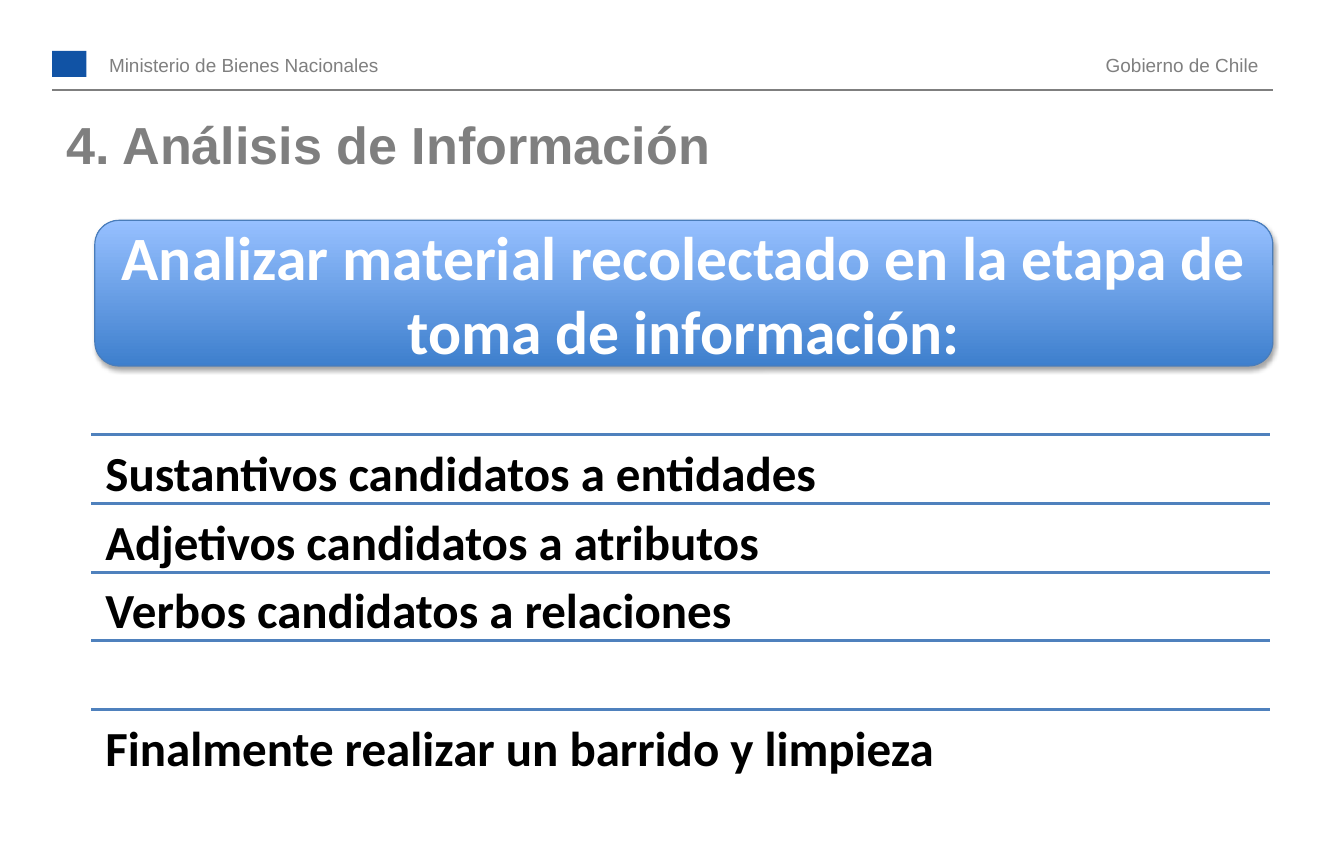
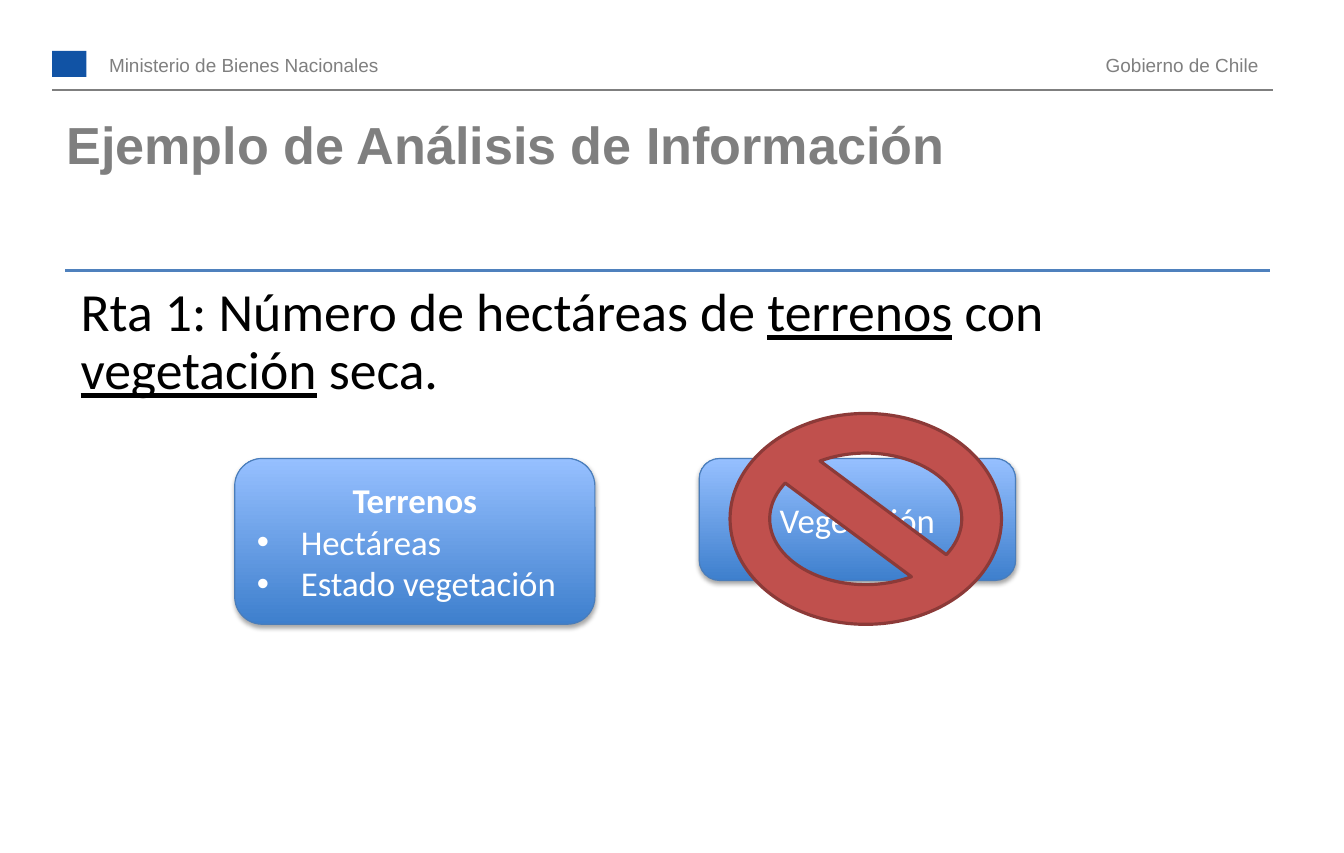
"""Builds two slides on the analysis of information."""
from lxml import etree
from pptx import Presentation
from pptx.dml.color import RGBColor
from pptx.enum.shapes import MSO_CONNECTOR, MSO_SHAPE
from pptx.enum.text import MSO_ANCHOR, MSO_AUTO_SIZE, PP_ALIGN
from pptx.oxml import parse_xml
from pptx.oxml.ns import nsdecls, qn
from pptx.util import Emu, Pt

STRAIGHT = MSO_CONNECTOR.STRAIGHT
RECT, ROUND_RECT = MSO_SHAPE.RECTANGLE, MSO_SHAPE.ROUNDED_RECTANGLE
NO_SYMBOL = MSO_SHAPE.NO_SYMBOL
TOP, MIDDLE = MSO_ANCHOR.TOP, MSO_ANCHOR.MIDDLE
LEFT, CENTER, RIGHT = PP_ALIGN.LEFT, PP_ALIGN.CENTER, PP_ALIGN.RIGHT
NO_AUTOFIT = MSO_AUTO_SIZE.NONE

PX = 9525
WIDTH, HEIGHT = 1134, 720
MARGIN, RIGHT_EDGE = 44, 1074
LABEL_WIDTH = 484

BLACK = RGBColor(0x00, 0x00, 0x00)
WHITE = RGBColor(0xFF, 0xFF, 0xFF)
GRAY = RGBColor(0x7F, 0x7F, 0x7F)
EMBLEM_BLUE = RGBColor(0x11, 0x53, 0xA5)
RULE_BLUE = RGBColor(0x4F, 0x81, 0xBD)
BOX_DARK = RGBColor(0x3E, 0x7F, 0xCD)
BOX_LIGHT = RGBColor(0x96, 0xC0, 0xFF)
BOX_LINE = RGBColor(0x4A, 0x7D, 0xBA)
SIGN_RED = RGBColor(0xC0, 0x50, 0x4D)
SIGN_LINE = RGBColor(0x8C, 0x3A, 0x38)

SHADOW = (
    f'<a:outerShdw {nsdecls("a")} blurRad="39370" dist="22860" dir="5400000" '
    'rotWithShape="0"><a:srgbClr val="000000"><a:alpha val="35000"/>'
    '</a:srgbClr></a:outerShdw>'
)


def px(*lengths):
    return [Emu(n * PX) for n in lengths]


class Deck:
    """Holds the presentation, its style and the current slide."""

    def __init__(self):
        self.prs = Presentation()
        self.prs.slide_width, self.prs.slide_height = px(WIDTH, HEIGHT)
        self.s = None

    def slide(self, title):
        self.s = self.prs.slides.add_slide(self.prs.slide_layouts[1])
        self.shape(RECT, MARGIN, 43, 29, 22, EMBLEM_BLUE)
        self.label("Ministerio de Bienes Nacionales", 80, LEFT)
        self.label("Gobierno de Chile", RIGHT_EDGE - LABEL_WIDTH, RIGHT)
        self.rule(MARGIN, RIGHT_EDGE, 76, GRAY, 0.75)
        sp = self.s.shapes.title
        self.place(sp, MARGIN, 77, 1005, 89)
        tf = self.frame(sp, MIDDLE)
        tf.text = title
        self.font(tf.paragraphs[0], 33, GRAY, "Arial", True)

    def place(self, sp, x, y, w, h):
        sp.left, sp.top, sp.width, sp.height = px(x, y, w, h)

    def frame(self, sp, anchor, inset_x=12, inset_y=6):
        tf = sp.text_frame
        tf.word_wrap = True
        tf.auto_size = NO_AUTOFIT
        tf.vertical_anchor = anchor
        tf.margin_left, tf.margin_right = px(inset_x, inset_x)
        tf.margin_top, tf.margin_bottom = px(inset_y, inset_y)
        return tf

    def font(self, p, size, color, name="Calibri", bold=False, align=LEFT):
        p.alignment = align
        for r in p.runs:
            r.font.size = Pt(size)
            r.font.name = name
            r.font.bold = bold
            r.font.color.rgb = color

    def label(self, text, x, align):
        sp = self.s.shapes.add_textbox(*px(x, 38, LABEL_WIDTH, 33))
        tf = self.frame(sp, MIDDLE)
        tf.text = text
        self.font(tf.paragraphs[0], 12, GRAY, "Arial", align=align)

    def rule(self, x1, x2, y, color=RULE_BLUE, weight=2):
        line = self.s.shapes.add_connector(STRAIGHT, *px(x1, y, x2, y))
        line.line.color.rgb = color
        line.line.width = Pt(weight)
        etree.SubElement(line._element.spPr, qn("a:effectLst"))

    def shape(self, kind, x, y, w, h, fill=None, outline=None, weight=0.75):
        sp = self.s.shapes.add_shape(kind, *px(x, y, w, h))
        sp.shadow.inherit = False
        if fill is not None:
            sp.fill.solid()
            sp.fill.fore_color.rgb = fill
        if outline is None:
            sp.line.fill.background()
        else:
            sp.line.color.rgb = outline
            sp.line.width = Pt(weight)
        return sp

    def box(self, text, x, y, w, h, size, bold=False, bullets=()):
        sp = self.shape(ROUND_RECT, x, y, w, h, outline=BOX_LINE)
        sp.fill.gradient()
        sp.fill.gradient_angle = 90
        for stop, color in zip(sp.fill.gradient_stops, (BOX_DARK, BOX_LIGHT)):
            stop.color.rgb = color
        sp._element.spPr.find(qn("a:effectLst")).append(parse_xml(SHADOW))
        tf = self.frame(sp, MIDDLE)
        tf.text = text
        self.font(tf.paragraphs[0], size, WHITE, bold=bold, align=CENTER)
        for item in bullets:
            p = tf.add_paragraph()
            p.text = item
            self.font(p, size, WHITE)
            self.bullet(p, 37, "•")

    def bullet(self, p, indent, char=None):
        pPr = p._p.get_or_add_pPr()
        pPr.set("marL", str(indent * PX))
        pPr.set("indent", str(-indent * PX))
        if char:
            etree.SubElement(pPr, qn("a:buFont"), typeface="Arial")
            etree.SubElement(pPr, qn("a:buChar"), char=char)
        else:
            etree.SubElement(pPr, qn("a:buNone"))

    def body(self, rows, x, y, w, h, size, inset, bold=False):
        """Fills the body with rows of (space before, [(text, underlined)])."""
        sp = self.s.placeholders[1]
        self.place(sp, x, y, w, h)
        tf = self.frame(sp, TOP, inset, inset)
        for i, (space, parts) in enumerate(rows):
            p = tf.add_paragraph() if i else tf.paragraphs[0]
            p.line_spacing = 0.9
            p.space_before = Pt(space)
            for text, underlined in parts:
                r = p.add_run()
                r.text = text
                r.font.underline = underlined
            self.font(p, size, BLACK, bold=bold)
            self.bullet(p, 0)

    def no_sign(self, x, y, w, h):
        sp = self.shape(NO_SYMBOL, x, y, w, h, SIGN_RED, SIGN_LINE, 2)
        sp.adjustments[0] = 0.188


def analysis(deck):
    deck.slide("4. Análisis de Información")
    deck.box("Analizar material recolectado en la etapa de toma de información:",
             80, 186, 994, 123, 39, bold=True)
    x, y, w, pitch, count = 77, 367, 995, 58, 5
    for i in range(count):
        deck.rule(x, x + w, y + i * pitch)
    rows = [
        (0, "Sustantivos candidatos a entidades"),
        (10, "Adjetivos candidatos a atributos"),
        (10, "Verbos candidatos a relaciones"),
        (53.8, "Finalmente realizar un barrido y limpieza"),
    ]
    deck.body([(space, [(text, False)]) for space, text in rows],
              x, y, w, count * pitch, 31, 12, bold=True)


def example(deck):
    deck.slide("Ejemplo de Análisis de Información")
    x, y, w = 55, 228, 1017
    deck.rule(x, x + w, y)
    answer = [
        ("Rta 1: Número de hectáreas de ", False),
        ("terrenos", True),
        (" con ", False),
        ("vegetación", True),
        (" seca.", False),
    ]
    deck.body([(0, answer)], x, y, w, 125, 34, 13)
    deck.box("Terrenos", 198, 387, 304, 140, 22, bold=True,
             bullets=("Hectáreas", "Estado vegetación"))
    deck.box("Vegetación", 590, 387, 267, 103, 22)
    deck.no_sign(616, 349, 229, 178)


def main():
    deck = Deck()
    analysis(deck)
    example(deck)
    deck.prs.save("out.pptx")


if __name__ == "__main__":
    main()
